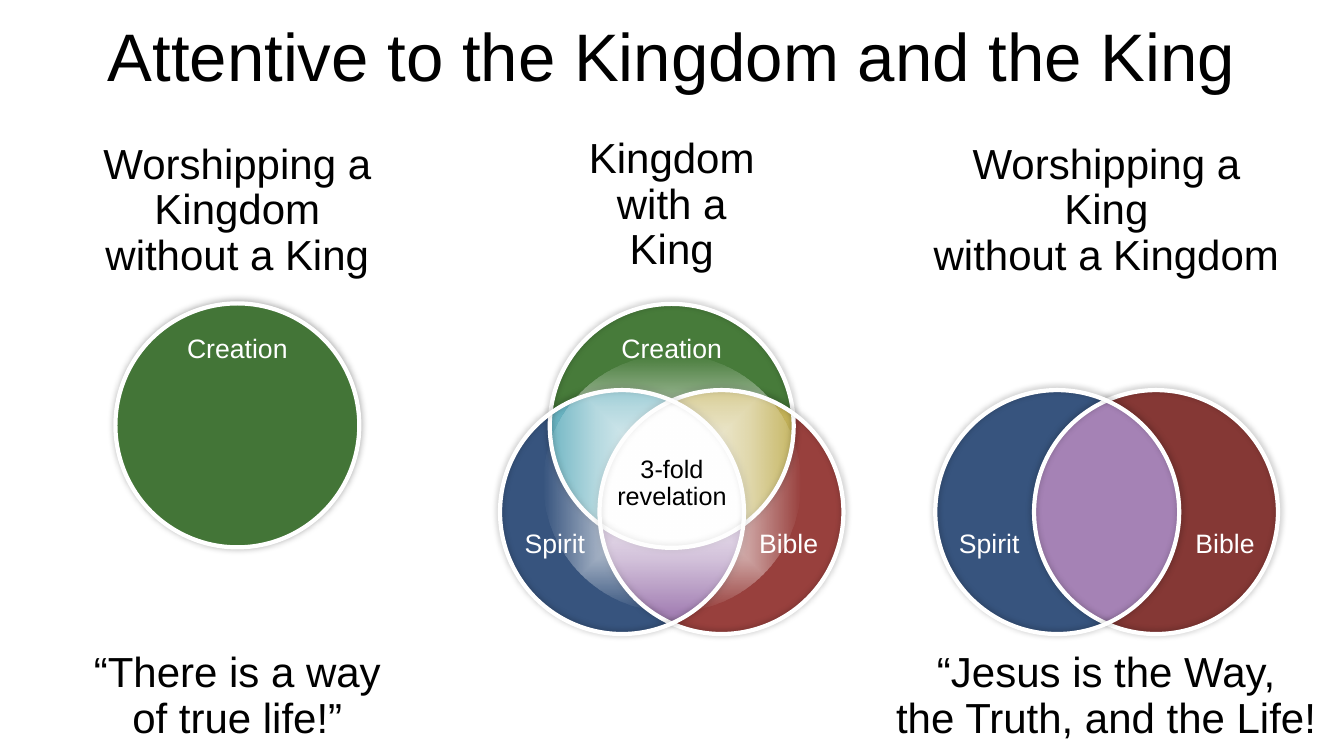
"""Build a slide comparing a kingdom, a king, and a kingdom with a king as Venn diagrams."""
from math import atan2, cos, hypot, pi, radians, sin, sqrt, tan, tau

from lxml import etree
from pptx import Presentation
from pptx.dml.color import RGBColor as Rgb
from pptx.enum.shapes import MSO_SHAPE as Kind
from pptx.enum.text import MSO_ANCHOR as Anchor, MSO_AUTO_SIZE as Fit, PP_ALIGN as Align
from pptx.oxml.ns import nsdecls
from pptx.util import Pt

PX = 9144
WIDE, HIGH = 2667, 1500
RADIUS = 242
COLORS = {
    "black": "000000", "white": "FFFFFF", "leaf": "437537", "green": "477B3A",
    "red": "98403D", "brick": "853835", "blue": "37547E",
    "gold": "C2B158", "violet": "A582B5", "teal": "68B2C0",
}
TITLE = ("Attentive to the Kingdom and the King", (13, 36, 2640, 175))
SIDES = [
    ("Worshipping a\vKingdom\vwithout a King", (183, 258, 576, 300), Anchor.BOTTOM, False),
    ("Worshipping a\nKing\vwithout a Kingdom", (1825, 258, 741, 300), Anchor.BOTTOM, False),
    ("“There is a way of true life!”", (136, 1280, 670, 206), Anchor.MIDDLE, True),
    ("“Jesus is the Way,\vthe Truth, and the Life!", (1735, 1280, 920, 206), Anchor.MIDDLE, True),
]
CENTER = ("Kingdom\vwith a\vKing", (934, 258, 798, 300))
LONE = (471, 844)
TRIO = (1333, 959)
PAIR = (2196, 1016)
SPREAD = 114
GAP = 98
CRESTS = ("green", "red", "blue")
PETALS = ("gold", "violet", "teal")
LABELS = {
    "lone": [("Creation", (354, 656, 234, 75))],
    "trio": [("Creation", (1216, 656, 234, 75)), ("Bible", (1495, 1044, 140, 75)),
             ("Spirit", (1024, 1044, 154, 75))],
    "pair": [("Spirit", (1886, 1044, 154, 75)), ("Bible", (2361, 1044, 140, 75))],
}
CORE = ("3-fold revelation", (1173, 897, 321, 127))


def emu(*vals):
    return [round(val * PX) for val in vals]


def put_text(box, text, size=60, color="black", anchor=Anchor.MIDDLE, wrap=True, space=0.9):
    frame = box.text_frame
    frame.word_wrap = wrap
    frame.auto_size = Fit.SHAPE_TO_FIT_TEXT
    frame.vertical_anchor = anchor
    for side in ("left", "right", "top", "bottom"):
        setattr(frame, f"margin_{side}", PX * 4)
    frame.text = text
    for para in frame.paragraphs:
        para.alignment = Align.CENTER
        para.line_spacing = space
        para.space_before = Pt(0)
        for run in para.runs:
            run.font.name = "Arial"
            run.font.size = Pt(size)
            run.font.color.rgb = Rgb.from_string(COLORS[color])


def add_text(shapes, text, area, **style):
    put_text(shapes.add_textbox(*emu(*area)), text, **style)


def add_labels(shapes, key):
    for text, area in LABELS[key]:
        add_text(shapes, text, area, size=38, color="white", wrap=False)


def paint(shape, color=None):
    shape.shadow.inherit = False
    shape.line.fill.background()
    if color:
        shape.fill.solid()
        shape.fill.fore_color.rgb = Rgb.from_string(COLORS[color])
    else:
        shape.fill.background()


def add_disc(shapes, mid, radius, color=None):
    x, y = mid
    disc = shapes.add_shape(Kind.OVAL, *emu(x - radius, y - radius, 2 * radius, 2 * radius))
    paint(disc, color)
    return disc


def add_ring(shapes, mid, color=None):
    ring = add_disc(shapes, mid, RADIUS, color)
    ring.line.color.rgb = Rgb.from_string(COLORS["white"])
    ring.line.width = Pt(6)
    ring._element.spPr.find("{*}effectLst").append(etree.fromstring(
        f'<a:outerShdw {nsdecls("a")} blurRad="{Pt(10)}" dist="{Pt(2)}" dir="16200000"'
        ' rotWithShape="0"><a:srgbClr val="000000"><a:alpha val="30000"/></a:srgbClr>'
        '</a:outerShdw>'))


def add_glow(shapes, mid, radius):
    props = add_disc(shapes, mid, radius)._element.spPr
    stops = "".join(
        f'<a:gs pos="{pos}000"><a:srgbClr val="FFFFFF"><a:alpha val="{alpha}000"/></a:srgbClr></a:gs>'
        for pos, alpha in ((0, 100), (60, 50), (100, 0)))
    props.replace(props.find("{*}noFill"), etree.fromstring(
        f'<a:gradFill {nsdecls("a")} rotWithShape="1"><a:gsLst>{stops}</a:gsLst><a:path path="shape">'
        '<a:fillToRect l="50000" t="50000" r="50000" b="50000"/></a:path></a:gradFill>'))


def polar(mid, angle, dist):
    return mid[0] + dist * cos(radians(angle)), mid[1] + dist * sin(radians(angle))


def spin(dot, hub, turn):
    x, y = dot[0] - hub[0], dot[1] - hub[1]
    c, s = cos(radians(turn)), sin(radians(turn))
    return hub[0] + x * c - y * s, hub[1] + x * s + y * c


def arc(mid, start, end):
    """Yield cubic curves along the shorter arc, cut where it is level or upright."""
    first, last = (atan2(y - mid[1], x - mid[0]) for x, y in (start, end))
    sweep = (last - first + pi) % tau - pi
    low, high = sorted((first, first + sweep))
    cuts = [k * pi / 2 for k in range(-4, 5) if low + 0.02 < k * pi / 2 < high - 0.02]
    marks = [first, *sorted(cuts, reverse=sweep < 0), first + sweep]
    dist = hypot(start[0] - mid[0], start[1] - mid[1])
    for a, b in zip(marks, marks[1:]):
        pull = 4 / 3 * tan((b - a) / 4)
        yield [(mid[0] + dist * (cos(t) - k * sin(t)), mid[1] + dist * (sin(t) + k * cos(t)))
               for t, k in ((a, pull), (b, -pull), (b, 0))]


def add_piece(shapes, color, mids, nodes, hub, turn):
    mids, nodes = ([spin(dot, hub, -turn) for dot in dots] for dots in (mids, nodes))
    ends = nodes[1:] + nodes[:1]
    curves = [curve for sides in zip(mids, nodes, ends) for curve in arc(*sides)]
    pen = shapes.build_freeform(*emu(*nodes[0]), scale=1.0)
    pen.add_line_segments([tuple(emu(*curve[-1])) for curve in curves], close=True)
    piece = pen.convert_to_shape()
    paint(piece, color)
    for line, curve in zip(piece._element.findall(".//{*}lnTo"), curves):
        dots = "".join(f'<a:pt x="{x - piece.left}" y="{y - piece.top}"/>'
                       for x, y in (emu(*dot) for dot in curve))
        line.getparent().replace(line, etree.fromstring(
            f'<a:cubicBezTo {nsdecls("a")}>{dots}</a:cubicBezTo>'))
    half = piece.width / 2, piece.height / 2
    x, y = spin((piece.left + half[0], piece.top + half[1]), emu(*hub), turn)
    piece.left, piece.top = round(x - half[0]), round(y - half[1])
    piece.rotation = turn


def draw_trio(shapes):
    half = SPREAD * sqrt(3) / 2
    reach = sqrt(RADIUS ** 2 - half ** 2)
    axes = [-90 + 120 * here for here in range(3)]
    mids = [polar(TRIO, axis, SPREAD) for axis in axes]
    inner = [polar(TRIO, axis, reach - SPREAD / 2) for axis in axes]
    outer = [polar(TRIO, axis + 60, reach + SPREAD / 2) for axis in axes]
    order = [(here, (here + 1) % 3, (here + 2) % 3) for here in range(3)]
    add_disc(shapes, (1332, 960), 196, "white")
    for here, after, prior in order:
        add_piece(shapes, PETALS[here], [mids[here], mids[prior], mids[after]],
                  [outer[here], inner[after], inner[here]], TRIO, 120 * after)
    for here, after, prior in order:
        add_piece(shapes, CRESTS[here], [mids[here], mids[after], mids[prior]],
                  [outer[prior], outer[here], inner[here]], TRIO, 120 * here)
    for mid in mids:
        add_ring(shapes, mid)
    add_glow(shapes, TRIO, 255)
    add_labels(shapes, "trio")
    add_text(shapes, CORE[0], CORE[1], size=36)


def draw_pair(shapes):
    x, y = PAIR
    reach = sqrt(RADIUS ** 2 - GAP ** 2)
    top, foot = (x, y - reach), (x, y + reach)
    left, right = (x - GAP, y), (x + GAP, y)
    add_piece(shapes, "violet", [left, right], [top, foot], PAIR, 240)
    for color, mid, other, sign, turn in (("brick", right, left, 1, 60), ("blue", left, right, -1, 240)):
        edge = (mid[0] + sign * RADIUS, y)
        add_piece(shapes, color, [mid, mid, other], [top, edge, foot], PAIR, turn)
    for mid in (right, left):
        add_ring(shapes, mid)
    add_labels(shapes, "pair")


def main():
    deck = Presentation()
    deck.slide_width, deck.slide_height = emu(WIDE, HIGH)
    shapes = deck.slides.add_slide(deck.slide_layouts[5]).shapes
    head = shapes.title
    head.left, head.top, head.width, head.height = emu(*TITLE[1])
    put_text(head, TITLE[0], size=96, space=0.8)
    for text, area, anchor, wrap in SIDES:
        add_text(shapes, text, area, anchor=anchor, wrap=wrap)
    lone = shapes.add_group_shape().shapes
    add_ring(lone, LONE, "leaf")
    add_labels(lone, "lone")
    draw_trio(shapes.add_group_shape().shapes)
    draw_pair(shapes.add_group_shape().shapes)
    add_text(shapes, CENTER[0], CENTER[1])
    deck.save("out.pptx")


if __name__ == "__main__":
    main()
